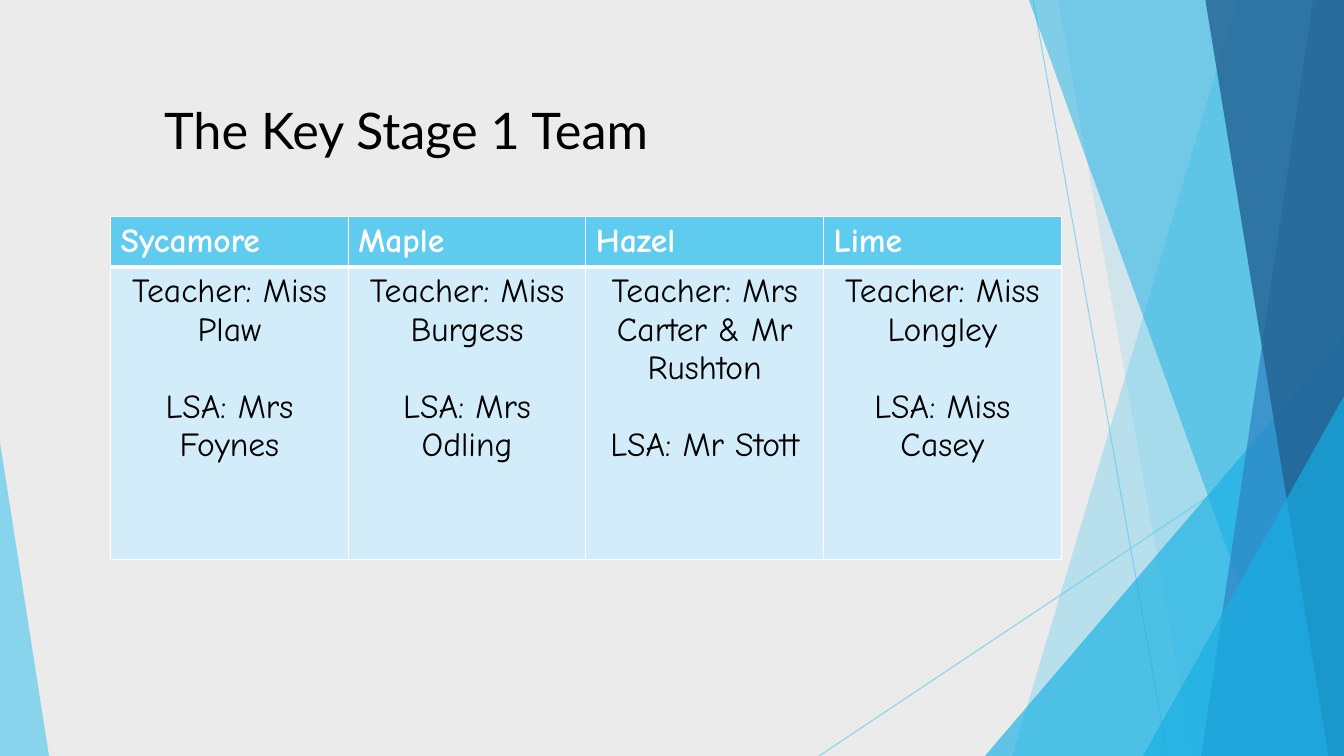
from lxml import etree
from pptx import Presentation
from pptx.dml.color import RGBColor
from pptx.enum import shapes, text
from pptx.oxml.ns import qn
from pptx.util import Pt

TITLE = "The Key Stage 1 Team"
CLASSES = [
    ("Sycamore", "Teacher: Miss Plaw", "LSA: Mrs Foynes"),
    ("Maple", "Teacher: Miss Burgess", "LSA: Mrs Odling"),
    ("Hazel", "Teacher: Mrs Carter & Mr Rushton", "LSA: Mr Stott"),
    ("Lime", "Teacher: Miss Longley", "LSA: Miss Casey"),
]

THEME = {
    "background": "EBEBEB", "sky": "5FCBEF", "azure": "17B0E4",
    "blue": "2E83C3", "navy": "226292", "pale": "D2ECF9",
    "white": "FFFFFF", "black": "000000",
    "title_font": "Lato", "title_size": 36,
    "table_font": "Comic Neue", "table_size": 24,
}
WIDTH, HEIGHT = 960, 540
TITLE_BOX = (110, 67, 631, 51)
TABLE_BOX = (79, 154.8, 679, 244.6)
HEADER_HEIGHT = 36
LSA_GAP = 27.5

# Start and end of each ray
RAYS = [((738, 0), (834, HEIGHT)), ((WIDTH, 290), (585, HEIGHT))]
# Bands reach the right edge: (top x, bottom x, colour, opacity)
# Wedges stand on the bottom edge: (left, top, width, apex, colour, opacity)
FACETS = [
    ("band", 884, 723, "sky", 36),
    ("band", 756, 852, "sky", 20),
    ("wedge", 703.5, 240, 256.5, 1, "azure", 66),
    ("band", 735, 930, "azure", 50),
    ("band", 938, 858, "blue", 70),
    ("band", 861, 949, "navy", 80),
    ("wedge", 816.5, 283, 143.5, 1, "azure", 66),
    ("wedge", 0, 316, 35, 0, "sky", 70),
]


def color(name):
    return RGBColor.from_string(THEME[name])


def points(values):
    return [Pt(value) for value in values]


def set_opacity(fill_parent, percent):
    for solid in fill_parent.iter(qn("a:srgbClr")):
        etree.SubElement(solid, qn("a:alpha"), val=str(percent * 1000))


def draw_ray(slide, start, end):
    ray = slide.shapes.add_connector(
        shapes.MSO_CONNECTOR.STRAIGHT, *points(start + end))
    ray.line.color.rgb = color("sky")
    ray.line.width = Pt(0.75)
    properties = ray._element.spPr
    set_opacity(properties, 70)
    etree.SubElement(properties, qn("a:effectLst"))


def draw_facet(slide, kind, *geometry, tint, opacity):
    if kind == "band":
        top_x, bottom_x = geometry
        outline = slide.shapes.build_freeform(Pt(top_x), 0)
        corners = [(WIDTH, 0), (WIDTH, HEIGHT), (bottom_x, HEIGHT)]
        outline.add_line_segments([points(corner) for corner in corners])
        facet = outline.convert_to_shape()
    else:
        left, top, width, apex = geometry
        facet = slide.shapes.add_shape(
            shapes.MSO_SHAPE.ISOSCELES_TRIANGLE,
            *points((left, top, width, HEIGHT - top)))
        facet.adjustments[0] = apex
    facet.shadow.inherit = False
    facet.fill.solid()
    facet.fill.fore_color.rgb = color(tint)
    facet.line.fill.background()
    set_opacity(facet._element.spPr, opacity)


def style_font(font, role, tint, bold=False):
    style = {"name": THEME[role + "_font"], "size": Pt(THEME[role + "_size"]),
             "bold": bold}
    for attribute, value in style.items():
        setattr(font, attribute, value)
    font.color.rgb = color(tint)


def style_cell(cell, tint, bottom_width):
    properties = cell._tc.get_or_add_tcPr()
    for side, width in {"L": 1, "R": 1, "T": 1, "B": bottom_width}.items():
        border = etree.SubElement(
            properties, qn("a:ln" + side), w=str(Pt(width)))
        solid = etree.SubElement(border, qn("a:solidFill"))
        etree.SubElement(solid, qn("a:srgbClr"), val=THEME["white"])
    cell.fill.solid()
    cell.fill.fore_color.rgb = color(tint)


def add_title(slide):
    title = slide.shapes.title
    box = dict(zip(("left", "top", "width", "height"), points(TITLE_BOX)))
    for attribute, value in box.items():
        setattr(title, attribute, value)
    title.text_frame.text = TITLE
    title.text_frame.vertical_anchor = text.MSO_ANCHOR.MIDDLE
    heading = title.text_frame.paragraphs[0]
    heading.alignment = text.PP_ALIGN.LEFT
    style_font(heading.runs[0].font, "title", "black")


def add_team_table(slide):
    team = slide.shapes.add_table(
        2, len(CLASSES), *points(TABLE_BOX)).table
    team.horz_banding = False
    team.rows[0].height = Pt(HEADER_HEIGHT)
    team.rows[1].height = Pt(TABLE_BOX[3] - HEADER_HEIGHT)
    for column, (name, teacher, assistant) in enumerate(CLASSES):
        header, staff = team.cell(0, column), team.cell(1, column)
        style_cell(header, "sky", 3)
        style_cell(staff, "pale", 1)
        header.text = name
        style_font(header.text_frame.paragraphs[0].runs[0].font,
                   "table", "white", bold=True)
        staff.text = f"{teacher}\n{assistant}"
        for line in staff.text_frame.paragraphs:
            line.alignment = text.PP_ALIGN.CENTER
            style_font(line.runs[0].font, "table", "black")
        staff.text_frame.paragraphs[1].space_before = Pt(LSA_GAP)


def main():
    deck = Presentation()
    deck.slide_width, deck.slide_height = points((WIDTH, HEIGHT))
    slide = deck.slides.add_slide(deck.slide_layouts.get_by_name("Title Only"))
    slide.background.fill.solid()
    slide.background.fill.fore_color.rgb = color("background")
    for start, end in RAYS:
        draw_ray(slide, start, end)
    for *geometry, tint, opacity in FACETS:
        draw_facet(slide, *geometry, tint=tint, opacity=opacity)
    add_title(slide)
    add_team_table(slide)
    deck.save("out.pptx")


if __name__ == "__main__":
    main()
